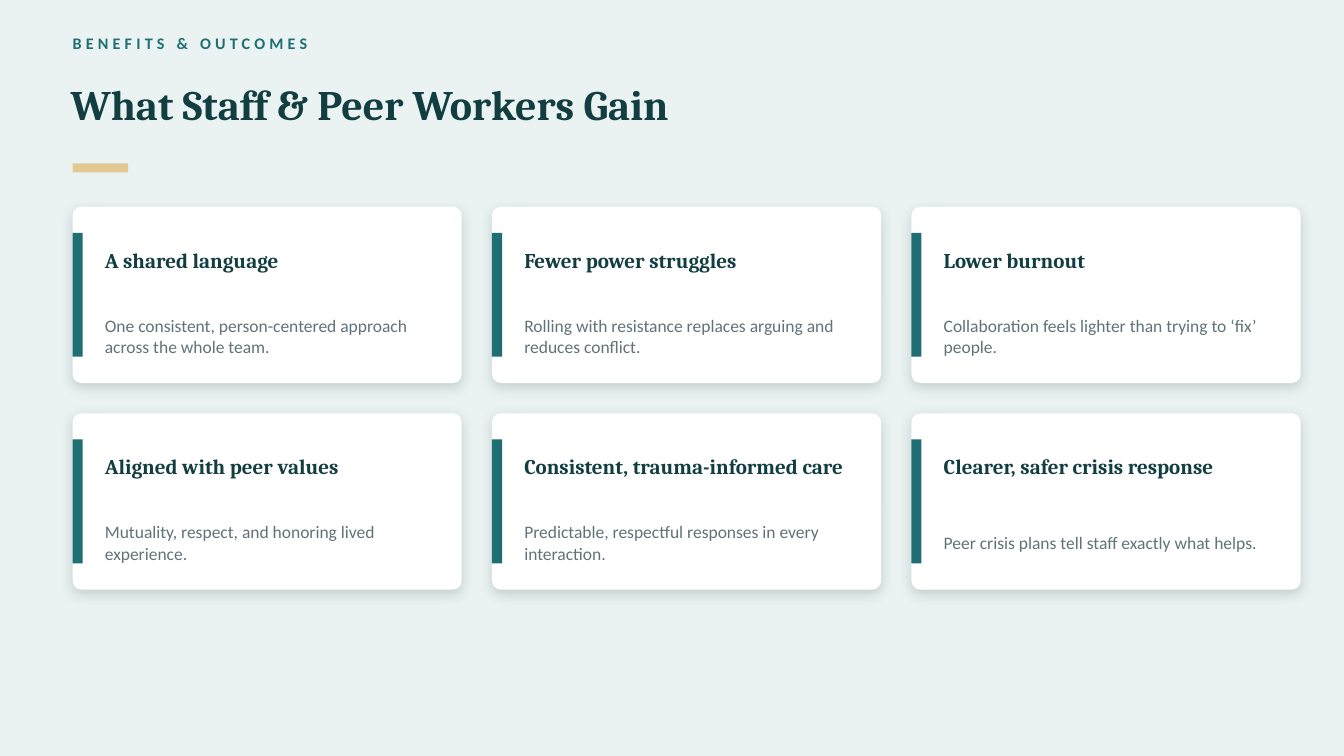
from lxml.etree import SubElement
from pptx import Presentation
from pptx.dml.color import RGBColor
from pptx.enum.shapes import MSO_SHAPE as Preset
from pptx.enum.text import MSO_ANCHOR as Anchor
from pptx.oxml.ns import qn
from pptx.util import Pt

PX = 9144
COLORS = {
    "background": "EAF3F2",
    "teal": "1F6E73",
    "ink": "123E42",
    "muted": "5F7378",
    "gold": "E4C892",
    "card": "FFFFFF",
    "shadow": "1A3033",
}
SERIF, SANS = "Cambria", "Calibri"
COLUMNS = 3
GAP = 30
CARD_WIDTH, CARD_HEIGHT = 386, 175
BENEFITS = [
    ("A shared language",
     "One consistent, person-centered approach across the whole team."),
    ("Fewer power struggles",
     "Rolling with resistance replaces arguing and reduces conflict."),
    ("Lower burnout",
     "Collaboration feels lighter than trying to ‘fix’ people."),
    ("Aligned with peer values",
     "Mutuality, respect, and honoring lived experience."),
    ("Consistent, trauma-informed care",
     "Predictable, respectful responses in every interaction."),
    ("Clearer, safer crisis response",
     "Peer crisis plans tell staff exactly what helps."),
]


def rgb(name):
    return RGBColor.from_string(COLORS[name])


def emu(*lengths):
    return [length * PX for length in lengths]


def add_block(slide, box, color, preset=Preset.RECTANGLE):
    block = slide.shapes.add_shape(preset, *emu(*box))
    block.shadow.inherit = False
    block.fill.solid()
    block.fill.fore_color.rgb = rgb(color)
    block.line.fill.background()
    return block


def add_label(slide, box, wording, font, size, color,
              bold=False, leading=None, tracking=None):
    frame = slide.shapes.add_textbox(*emu(*box)).text_frame
    frame.word_wrap = True
    frame.vertical_anchor = Anchor.MIDDLE
    frame.margin_left = frame.margin_right = 0
    frame.margin_top = frame.margin_bottom = 0
    paragraph = frame.paragraphs[0]
    if leading:
        paragraph.line_spacing = leading
    run = paragraph.add_run()
    run.text = wording
    run.font.name = font
    run.font.size = Pt(size)
    run.font.bold = bold
    run.font.color.rgb = rgb(color)
    if tracking:
        run.font._element.set("spc", str(tracking * 100))


def add_soft_shadow(block):
    effects = block._element.spPr.find(qn("a:effectLst"))
    shadow = SubElement(effects, qn("a:outerShdw"), blurRad=str(Pt(9)),
                        dist=str(Pt(3)), dir="5400000", algn="bl",
                        rotWithShape="0")
    tint = SubElement(shadow, qn("a:srgbClr"), val=COLORS["shadow"])
    SubElement(tint, qn("a:alpha"), val="18000")


def add_header(slide, left, top):
    add_label(slide, (left, top, 1100, 30), "BENEFITS & OUTCOMES",
              SANS, 11.5, "teal", bold=True, tracking=3)
    add_label(slide, (left - 2, top + 27, 1200, 95),
              "What Staff & Peer Workers Gain", SERIF, 30, "ink", bold=True)
    add_block(slide, (left, top + 134, 55, 9), "gold")


def add_card(slide, box, heading, detail):
    left, top, width, height = box
    card = add_block(slide, box, "card", Preset.ROUNDED_RECTANGLE)
    card.adjustments[0] = 0.05
    add_soft_shadow(card)
    add_block(slide, (left, top + 26, 10, height - 52), "teal")
    text_left, text_width = left + 32, width - 55
    add_label(slide, (text_left, top + 24, text_width, 60), heading,
              SERIF, 15, "ink", bold=True, leading=0.95)
    add_label(slide, (text_left, top + 92, text_width, 72), detail,
              SANS, 12.5, "muted", leading=1.02)


def add_benefit_grid(slide, left, top):
    for index, (heading, detail) in enumerate(BENEFITS):
        row, column = divmod(index, COLUMNS)
        box = (left + column * (CARD_WIDTH + GAP),
               top + row * (CARD_HEIGHT + GAP), CARD_WIDTH, CARD_HEIGHT)
        add_card(slide, box, heading, detail)


def main():
    deck = Presentation()
    deck.slide_width, deck.slide_height = emu(1333, 750)
    slide = deck.slides.add_slide(deck.slide_layouts[6])
    slide.background.fill.solid()
    slide.background.fill.fore_color.rgb = rgb("background")
    add_header(slide, 72, 28)
    add_benefit_grid(slide, 72, 205)
    deck.save("out.pptx")


if __name__ == "__main__":
    main()
